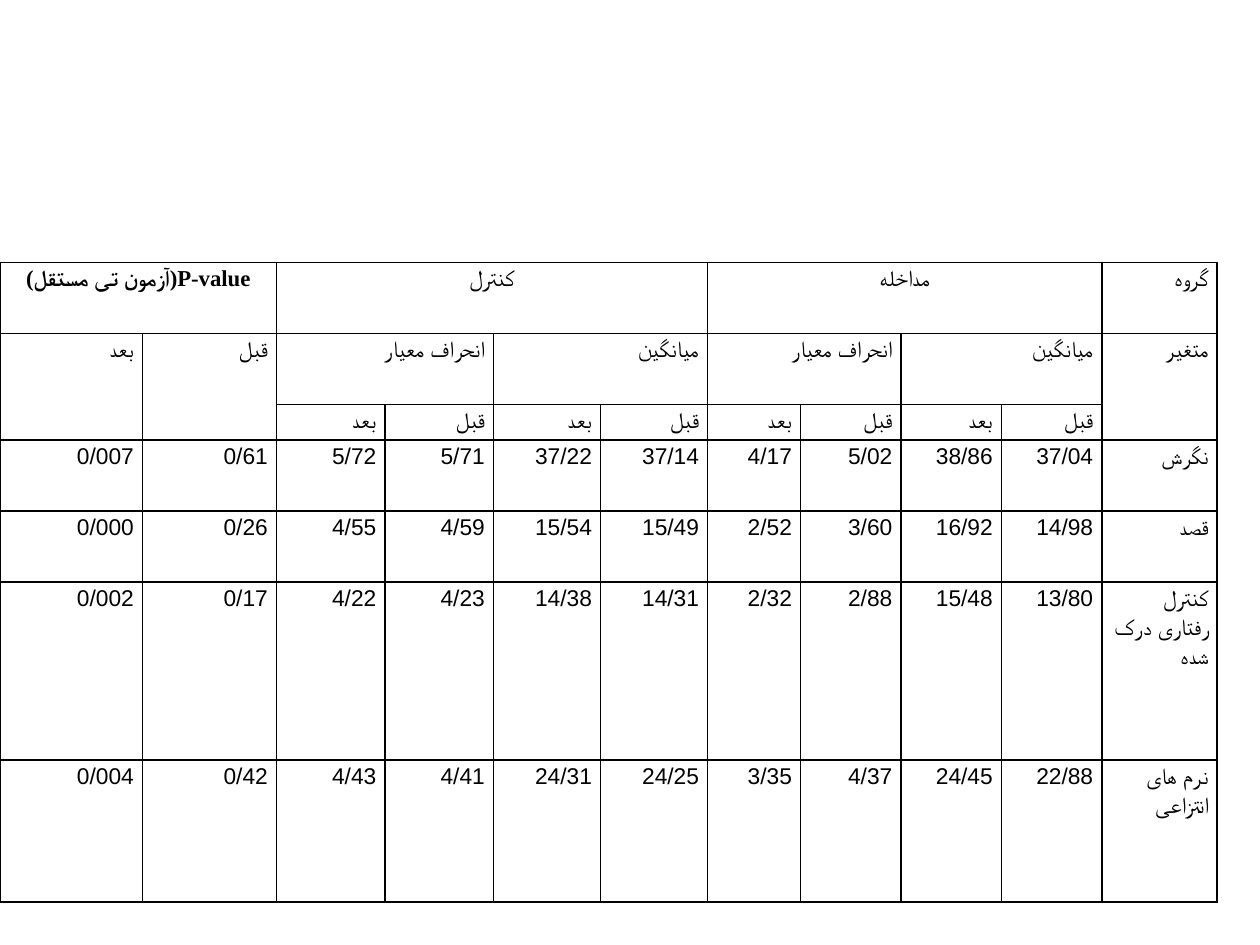
from lxml import etree
from pptx import Presentation
from pptx import util as u
from pptx.dml import color
from pptx.enum import text
from pptx.oxml import ns

HUES = {"ink": "000000"}
HEAD = [
    ["P-value(آزمون تی مستقل)", "", "کنترل", "", "", "", "مداخله", "", "", "", "گروه"],
    ["بعد", "قبل"] + ["انحراف معیار", "", "میانگین", ""] * 2 + ["متغیر"],
    ["", ""] + ["بعد", "قبل"] * 4 + [""],
]
DATA = [
    "0/007 0/61 5/72 5/71 37/22 37/14 4/17 5/02 38/86 37/04".split() + ["نگرش"],
    "0/000 0/26 4/55 4/59 15/54 15/49 2/52 3/60 16/92 14/98".split() + ["قصد"],
    "0/002 0/17 4/22 4/23 14/38 14/31 2/32 2/88 15/48 13/80".split()
    + ["کنترل رفتاری درک شده"],
    "0/004 0/42 4/43 4/41 24/31 24/25 3/35 4/37 24/45 22/88".split()
    + ["نرم های انتزاعی"],
]
COLS = [81.4, 76.6, 62, 62, 61.2, 61.2, 53.1, 57.4, 57.4, 57.4, 66]
ROWS = [20.3 * n for n in (2, 2, 1, 2, 2, 5, 4)]
SPANS = [(0, 0, 0, 1), (0, 2, 0, 5), (0, 6, 0, 9), (1, 0, 2, 0), (1, 1, 2, 1),
         (1, 10, 2, 10)] + [(1, c, 1, c + 1) for c in (2, 4, 6, 8)]


class Deck:
    """Holds the table style and the current slide."""

    face, title, script, size = "Calibri", "Times New Roman", "Arial", 13

    def __init__(self):
        self.file = Presentation()
        self.file.slide_width, self.file.slide_height = u.Pt(720), u.Pt(540)
        self.slide = self.file.slides.add_slide(self.file.slide_layouts[6])

    def edge(self, cell):
        props = cell._tc.get_or_add_tcPr()
        for side in ("a:lnL", "a:lnR", "a:lnT", "a:lnB"):
            line = etree.SubElement(props, ns.qn(side), w=str(u.Pt(1)))
            fill = etree.SubElement(line, ns.qn("a:solidFill"))
            etree.SubElement(fill, ns.qn("a:srgbClr"), val=HUES["ink"])

    def label(self, cell, words, mid, bold):
        para = cell.text_frame.paragraphs[0]
        para.text = words
        para.alignment = text.PP_ALIGN.CENTER if mid else text.PP_ALIGN.RIGHT
        para.line_spacing = 1.15
        para._p.get_or_add_pPr().set("rtl", "1")
        for run in para.runs:
            font = run.font
            font.size, font.bold = u.Pt(self.size), bold
            font.color.rgb = color.RGBColor.from_string(HUES["ink"])
            font.name = self.title if bold else self.face
            face = self.title if bold else self.script
            etree.SubElement(run._r.get_or_add_rPr(), ns.qn("a:cs"), typeface=face)

    def table(self, left, top, cols, rows, cells, spans):
        frame = self.slide.shapes.add_table(
            len(rows), len(cols), u.Pt(left), u.Pt(top), u.Pt(sum(cols)), u.Pt(sum(rows)))
        grid = frame.table
        grid.first_row = grid.horz_banding = False
        for col, wide in zip(grid.columns, cols):
            col.width = u.Pt(wide)
        for row, high in zip(grid.rows, rows):
            row.height = u.Pt(high)
        for r, line in enumerate(cells):
            for c, words in enumerate(line):
                cell = grid.cell(r, c)
                cell.margin_left = cell.margin_right = u.Pt(5)
                cell.margin_top = cell.margin_bottom = 0
                self.edge(cell)
                cell.fill.background()
                if words:
                    last = c == len(cols) - 1
                    self.label(cell, words, r == 0 and not last, r == c == 0)
        for r, c, low, far in spans:
            grid.cell(r, c).merge(grid.cell(low, far))


def main():
    deck = Deck()
    deck.table(0, 150, COLS, ROWS, HEAD + DATA, SPANS)
    deck.file.save("out.pptx")


if __name__ == "__main__":
    main()
